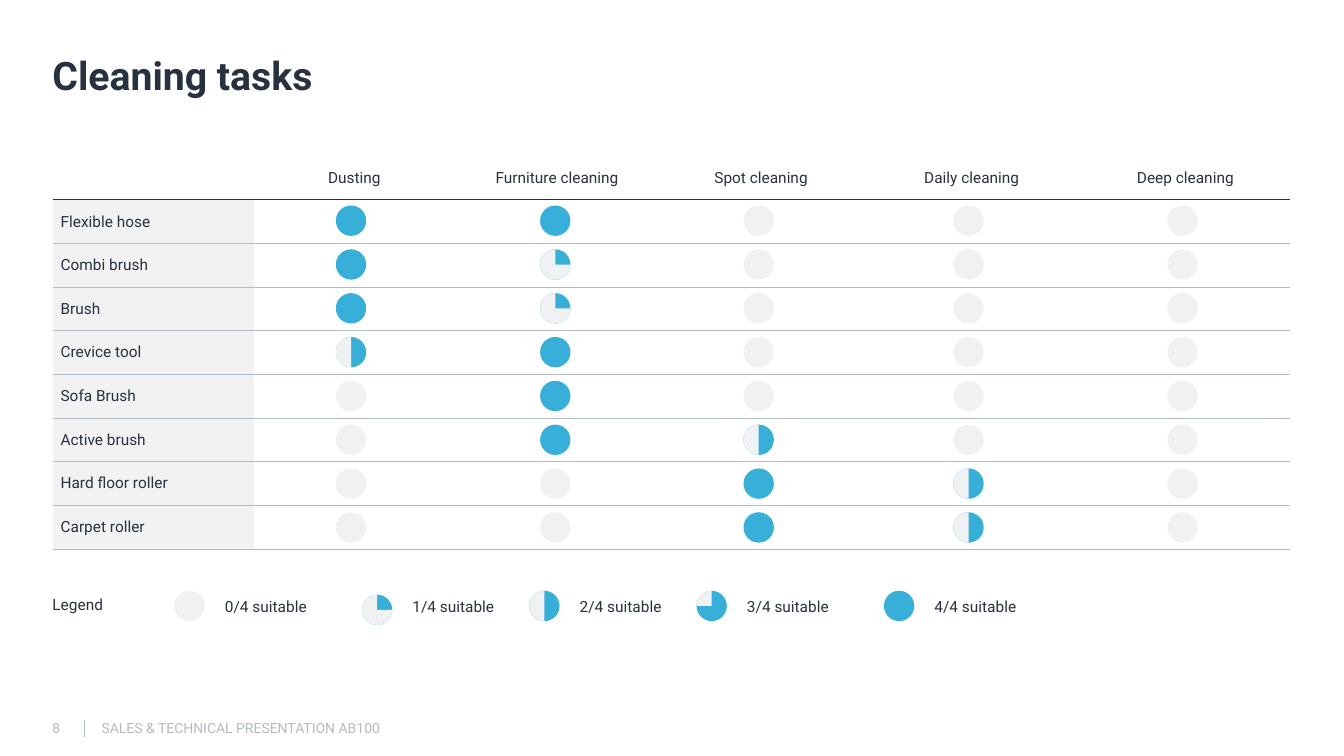
"""Build the cleaning tasks slide: a suitability matrix of tools by task, with its legend."""
from lxml.etree import SubElement
from pptx import Presentation
from pptx.dml.color import RGBColor
from pptx.enum.shapes import MSO_CONNECTOR, MSO_SHAPE
from pptx.enum.text import MSO_ANCHOR, PP_ALIGN
from pptx.oxml import parse_xml
from pptx.oxml.ns import nsdecls, qn
from pptx.util import Pt

INK = RGBColor(0x28, 0x31, 0x3F)
MUTED = RGBColor(0xB3, 0xBB, 0xC5)
BLUE = RGBColor(0x38, 0xAF, 0xD9)
PALE = RGBColor(0xF0, 0xF1, 0xF3)
LABEL_FILL = RGBColor(0xF2, 0xF2, 0xF2)

LEFT, TABLE_TOP, ROW_H, DOT = 37.5, 111.6, 31.2, 21.7
COL_WIDTHS = [144, 143.3, 146.2, 145.4, 155.5, 149.8]
DOT_LEFTS = [239.9, 385.8, 531.1, 681, 833.8]
TASKS = ["Dusting", "Furniture cleaning", "Spot cleaning", "Daily cleaning", "Deep cleaning"]
SCORES = {
    "Flexible hose": [4, 4, 0, 0, 0],
    "Combi brush": [4, 1, 0, 0, 0],
    "Brush": [4, 1, 0, 0, 0],
    "Crevice tool": [2, 4, 0, 0, 0],
    "Sofa Brush": [0, 4, 0, 0, 0],
    "Active brush": [0, 4, 2, 0, 0],
    "Hard floor roller": [0, 0, 4, 2, 0],
    "Carpet roller": [0, 0, 4, 2, 0],
}
BODY = {"name": "Roboto", "size": Pt(11), "bold": False, "color": INK}
TITLE = BODY | {"size": Pt(28), "bold": True}
FOOTER = BODY | {"size": Pt(10), "color": MUTED}
LEGEND_TOP = 422


def write(tf, text, style):
    """Put one formatted run in the first paragraph and return the paragraph."""
    p = tf.paragraphs[0]
    r = p.add_run()
    r.text = text
    for name, value in style.items():
        if name == "color":
            r.font.color.rgb = value
        else:
            setattr(r.font, name, value)
    return p


def add_dot(shapes, left, top, score):
    """Draw a disc whose blue part is score quarters."""
    parts = [(MSO_SHAPE.OVAL, BLUE if score else PALE)]
    if 0 < score < 4:
        parts.append((MSO_SHAPE.PIE, PALE))
        shapes = shapes.add_group_shape().shapes
    for kind, color in parts:
        sp = shapes.add_shape(kind, Pt(left), Pt(top), Pt(DOT), Pt(DOT))
        sp.shadow.inherit = False
        sp.fill.solid()
        sp.fill.fore_color.rgb = color
        sp.line.fill.background()
        if kind == MSO_SHAPE.PIE:
            sp.adjustments[0] = 54 * (score - 1)
            sp.adjustments[1] = 162


prs = Presentation()
prs.slide_width, prs.slide_height = Pt(960), Pt(540)
s = prs.slides.add_slide(prs.slide_layouts[6])

rule = s.shapes.add_connector(MSO_CONNECTOR.STRAIGHT, Pt(60), Pt(514.2), Pt(60), Pt(526.4))
rule.line.color.rgb = MUTED
rule.line.width = Pt(0.25)
SubElement(rule._element.spPr, qn("a:effectLst"))

texts = [
    ("Cleaning tasks", LEFT, 38.9, 884, 30.2, 0, TITLE),
    ("SALES & TECHNICAL PRESENTATION AB100", 72.6, 514.2, 230.4, 12.2, 0, FOOTER),
    ("8", LEFT, 514.2, 21.6, 12.2, 0, FOOTER),
    ("Legend", LEFT, 424.8, 77, 13.7, 0, BODY),
]
legend_lefts = [124.6, 258.5, 378, 497.5, 631.4]
for score, left in enumerate(legend_lefts):
    texts.append((f"{score}/4 suitable", left + DOT, 426.2, 77, 13.7, 14.4, BODY))
for text, left, top, width, height, inset, style in texts:
    tf = s.shapes.add_textbox(Pt(left), Pt(top), Pt(width), Pt(height)).text_frame
    tf.word_wrap = True
    tf.margin_left = Pt(inset)
    tf.margin_top = tf.margin_right = tf.margin_bottom = 0
    tf.vertical_anchor = MSO_ANCHOR.MIDDLE if style is FOOTER else MSO_ANCHOR.TOP
    p = write(tf, text, style)
    if style is TITLE:
        p.line_spacing = Pt(31)
        p.space_after = Pt(4)

rows = [["", *TASKS]] + [[tool] + [""] * len(TASKS) for tool in SCORES]
frame = s.shapes.add_table(len(rows), len(COL_WIDTHS), Pt(LEFT), Pt(TABLE_TOP),
                           Pt(sum(COL_WIDTHS)), Pt(ROW_H * len(rows)))
table = frame.table
table.first_row = table.horz_banding = False
frame._element.xpath(".//a:tableStyleId")[0].text = "{2D5ABB26-0587-4C30-8999-92F81FD0307C}"
for column, width in zip(table.columns, COL_WIDTHS):
    column.width = Pt(width)
for i, row in enumerate(rows):
    table.rows[i].height = Pt(ROW_H)
    for j, text in enumerate(row):
        cell = table.cell(i, j)
        cell.vertical_anchor = MSO_ANCHOR.MIDDLE
        cell.margin_left = Pt(2.9 if j else 5.8)
        cell.margin_right = Pt(2.9)
        cell.margin_top = cell.margin_bottom = 0
        if i and j == 0:
            cell.fill.solid()
            cell.fill.fore_color.rgb = LABEL_FILL
        else:
            cell.fill.background()
        if text:
            p = write(cell.text_frame, text, BODY)
            p.alignment = PP_ALIGN.LEFT if i else PP_ALIGN.CENTER
        edges = {"lnB": MUTED if i else INK}
        if i:
            edges["lnT"] = INK if i == 1 else MUTED
        for tag, color in edges.items():
            cell._tc.get_or_add_tcPr().insert(0, parse_xml(
                f'<a:{tag} {nsdecls("a")} w="12700"><a:solidFill>'
                f'<a:srgbClr val="{color}"/></a:solidFill></a:{tag}>'))

for i, scores in enumerate(SCORES.values()):
    for left, score in zip(DOT_LEFTS, scores):
        add_dot(s.shapes, left, 146.8 + 31.3 * i, score)

for score, left in enumerate(legend_lefts):
    add_dot(s.shapes, left, LEGEND_TOP + (2.8 if score == 1 else 0), score)

prs.save("out.pptx")
